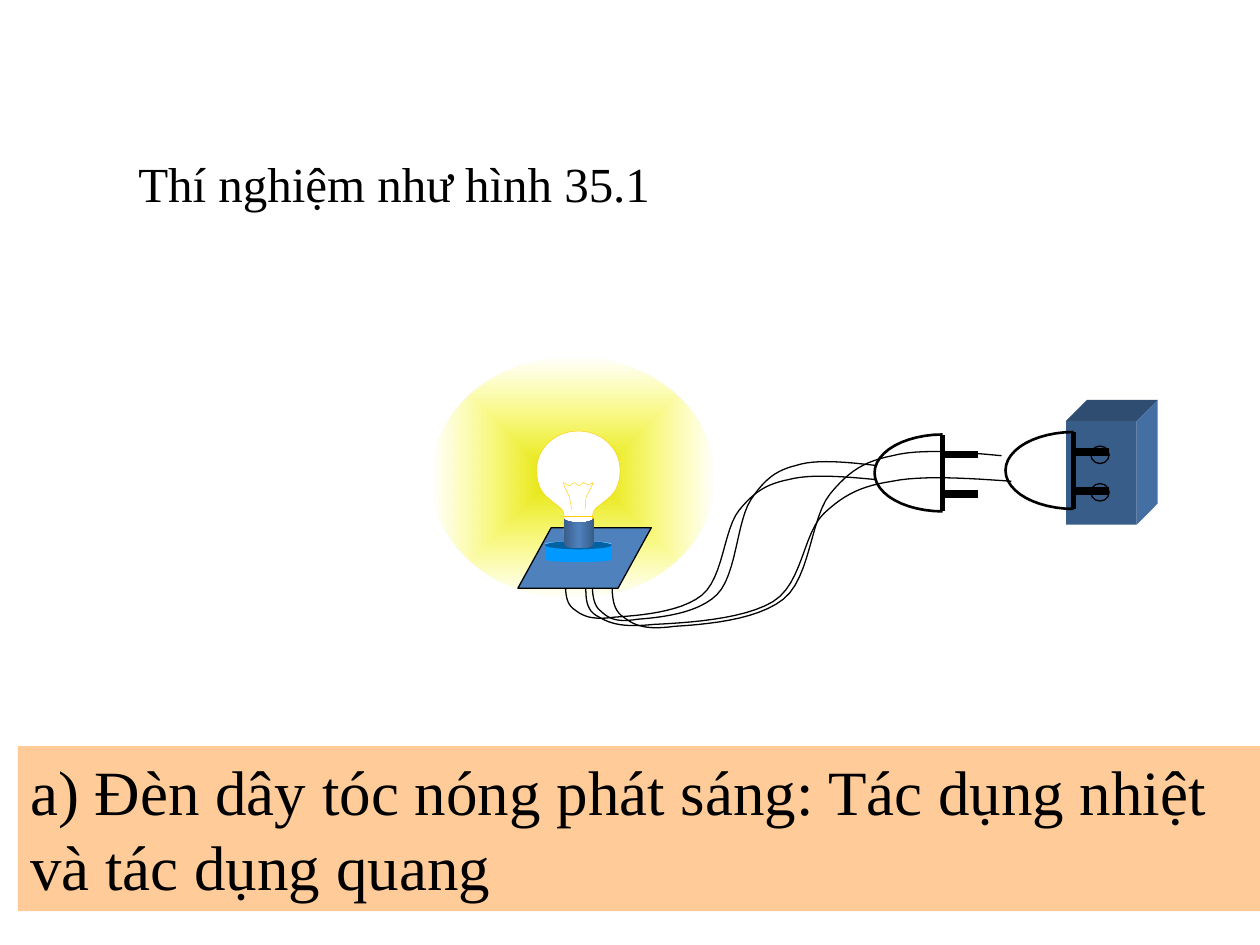
from lxml import etree
from pptx import Presentation
from pptx.dml.color import RGBColor
from pptx.enum.shapes import MSO_CONNECTOR, MSO_SHAPE as Preset
from pptx.oxml import parse_xml
from pptx.oxml.ns import nsdecls, qn
from pptx.util import Cm, Pt

COLORS = {
    "black": "000000", "white": "FFFFFF", "blue": "4F81BD", "front": "385D88",
    "top": "2F4D71", "side": "446FA3", "cap_edge": "395C87", "disc": "0099FF",
    "disc_top": "0062A3", "filament": "FFCC00", "glow": "E3E300",
    "glow_edge": "FFFF00", "caption": "FFCC99",
}
FONT = "Times New Roman"

# Curves as fractions of a box: a start point, then (control, control, end) triples
WIRE = [(0, .72), (0, .81), (0, .89), (.03, .93), (.06, .98), (.09, 1), (.16, .98),
        (.23, .97), (.37, .95), (.44, .83), (.51, .71), (.51, .38), (.56, .25),
        (.61, .12), (.65, .07), (.72, .04), (.79, 0), (.9, .02), (1, .04)]
PLUG = [(.66, 1), (.3, 1), (0, .78), (0, .5), (0, .22), (.3, 0), (.66, 0)]
HALF_BULB = [(.5, 0), (.78, 0), (1, .15), (1, .33), (1, .54), (.85, .57), (.71, .66),
             (.67, .69), (.67, .72), (.67, .76), (.67, .8), (.67, .84), (.67, .88),
             (.67, .96), (.6, 1), (.5, 1)]
FILAMENT = [(.42, .67), (.39, .56), (.33, .47), (.32, .44), (.39, .47), (.45, .44),
            (.51, .47), (.56, .44), (.62, .46), (.68, .44), (.59, .57), (.58, .67)]
THREAD = [(.33, .73), (.67, .73), (.67, .78), (.33, .78), (.33, .84), (.67, .84),
          (.67, .88), (.33, .88)]


def rgb(name):
    return RGBColor.from_string(COLORS[name])


def part(box, left, top, width, height):
    """A box inside another, given as fractions of it."""
    x, y, w, h = box
    return x + left * w, y + top * h, width * w, height * h


def curve(points, steps=12):
    """Points along a chain of cubic curves."""
    result = [points[0]]
    for i in range(0, len(points) - 1, 3):
        a, b, c, d = points[i:i + 4]
        for t in (n / steps for n in range(1, steps + 1)):
            u = 1 - t
            result.append(tuple(u**3 * p + 3 * u * u * t * q + 3 * u * t * t * r + t**3 * s
                                for p, q, r, s in zip(a, b, c, d)))
    return result


def paint(shape, fill=None, line=None, width=.75):
    shape.shadow.inherit = False
    if fill:
        shape.fill.solid()
        shape.fill.fore_color.rgb = rgb(fill)
    else:
        shape.fill.background()
    if line:
        shape.line.color.rgb = rgb(line)
        shape.line.width = Pt(width)
    else:
        shape.line.fill.background()
    return shape


def preset(shapes, kind, box, fill=None, line=None):
    return paint(shapes.add_shape(kind, *map(Cm, box)), fill, line)


def outline(shapes, box, contours, fill=None, line=None, width=.75):
    """Draw contours given as fractions of the box; filled ones are closed."""
    x, y, w, h = box
    builder = None
    for contour in contours:
        points = [(Cm(x + px * w), Cm(y + py * h)) for px, py in contour]
        if builder is None:
            builder = shapes.build_freeform(*points[0])
        else:
            builder.move_to(*points[0])
        builder.add_line_segments(points[1:], close=bool(fill))
    return paint(builder.convert_to_shape(), fill, line, width)


def stroke(shapes, box, start, end, width):
    x, y, w, h = box
    ends = [Cm(v) for px, py in (start, end) for v in (x + px * w, y + py * h)]
    line = shapes.add_connector(MSO_CONNECTOR.STRAIGHT, *ends)
    line.line.color.rgb = rgb("black")
    line.line.width = Pt(width)
    etree.SubElement(line._element.spPr, qn("a:effectLst"))


def gradient(shape, stops, direction):
    """Swap the solid fill for a gradient; a stop is (position, colour, alpha)."""
    marks = "".join(
        f'<a:gs pos="{pos * 1000}"><a:srgbClr val="{COLORS[color]}">'
        f'<a:alpha val="{alpha * 1000}"/></a:srgbClr></a:gs>' for pos, color, alpha in stops)
    xml = (f'<a:gradFill {nsdecls("a")} rotWithShape="1"><a:gsLst>{marks}</a:gsLst>'
           f'{direction}</a:gradFill>')
    solid = shape._element.spPr.find(qn("a:solidFill"))
    solid.getparent().replace(solid, parse_xml(xml))


def add_text(page, box, text, size, fill=None):
    frame_box = page.shapes.add_textbox(*map(Cm, box))
    if fill:
        frame_box.fill.solid()
        frame_box.fill.fore_color.rgb = rgb(fill)
    frame_box.text_frame.word_wrap = True
    span = frame_box.text_frame.paragraphs[0].add_run()
    span.text = text
    span.font.name = FONT
    span.font.size = Pt(size)
    span.font.color.rgb = rgb("black")


def add_glow(page, box):
    glow = preset(page.shapes, Preset.OVAL, box, "glow")
    gradient(glow, [(0, "glow", 100), (100, "glow_edge", 0)],
             '<a:path path="shape"><a:fillToRect l="50000" t="50000" r="50000" b="50000"/>'
             '</a:path>')


def add_socket(page, box):
    shapes = page.shapes.add_group_shape().shapes
    right, top = .77, .17
    outline(shapes, box, [[(0, top), (1 - right, 0), (1, 0), (right, top)]], "top")
    outline(shapes, box, [[(right, top), (1, 0), (1, 1 - top), (right, 1)]], "side")
    preset(shapes, Preset.RECTANGLE, part(box, 0, top, right, 1 - top), "front")
    for middle in (.44, .74):
        preset(shapes, Preset.OVAL, part(box, .27, middle - .07, .2, .14), "front", "black")


def add_plug(page, box):
    shapes = page.shapes.add_group_shape().shapes
    outline(shapes, box, [curve(PLUG)], line="black", width=1.5)
    stroke(shapes, box, (.66, 0), (.66, 1), 3)
    for height in (.26, .77):
        stroke(shapes, box, (.66, height), (1, height), 4.5)


def add_wires(page, boxes):
    for box in boxes:
        outline(page.shapes, box, [curve(WIRE)], line="black")


def add_bulb(page, box):
    shapes = page.shapes.add_group_shape().shapes
    # Glass
    right = curve(HALF_BULB)
    left = [(1 - x, y) for x, y in reversed(right)]
    outline(shapes, box, [right + left[1:-1]], "white", "filament", .25)
    outline(shapes, box, [FILAMENT, THREAD], line="filament", width=.25)
    # Disc it stands on
    preset(shapes, Preset.CAN, part(box, .1, .94, .8, .18), "disc")
    preset(shapes, Preset.OVAL, part(box, .1, .94, .8, .07), "disc_top")
    # Screw cap
    cap = preset(shapes, Preset.FLOWCHART_STORED_DATA, part(box, .32, .74, .37, .26), "blue")
    cap.rotation = 270
    gradient(cap, [(0, "cap_edge", 100), (50, "blue", 100), (100, "cap_edge", 100)],
             '<a:lin ang="5400000" scaled="1"/>')


def main():
    deck = Presentation()
    deck.slide_width, deck.slide_height = Cm(25.4), Cm(19.05)
    page = deck.slides.add_slide(deck.slide_layouts[6])

    add_text(page, (2.54, 2.97, 20.75, 1.45), "Thí nghiệm như hình 35.1", 28)

    # Experiment: lamp, wires, and the plug before and after it is put in
    add_glow(page, (8.69, 7.19, 5.72, 4.88))
    add_socket(page, (21.49, 8.06, 1.85, 2.52))
    add_plug(page, (17.63, 8.76, 2.08, 1.55))
    add_wires(page, [(11.94, 9.25, 5.71, 3.3), (11.4, 9.55, 6.25, 2.95),
                     (12.34, 9.04, 7.85, 3.66), (11.81, 9.58, 8.58, 3.07)])
    add_plug(page, (20.27, 8.71, 2.08, 1.55))
    base = preset(page.shapes, Preset.PARALLELOGRAM, (10.44, 10.64, 2.69, 1.22),
                  "blue", "black")
    base.adjustments[0] = .55
    add_bulb(page, (10.82, 8.69, 1.68, 2.36))

    add_text(page, (.36, 15.04, 25.04, 3.33),
             "a) Đèn dây tóc nóng phát sáng: Tác dụng nhiệt và tác dụng quang", 36, "caption")
    deck.save("out.pptx")


if __name__ == "__main__":
    main()
